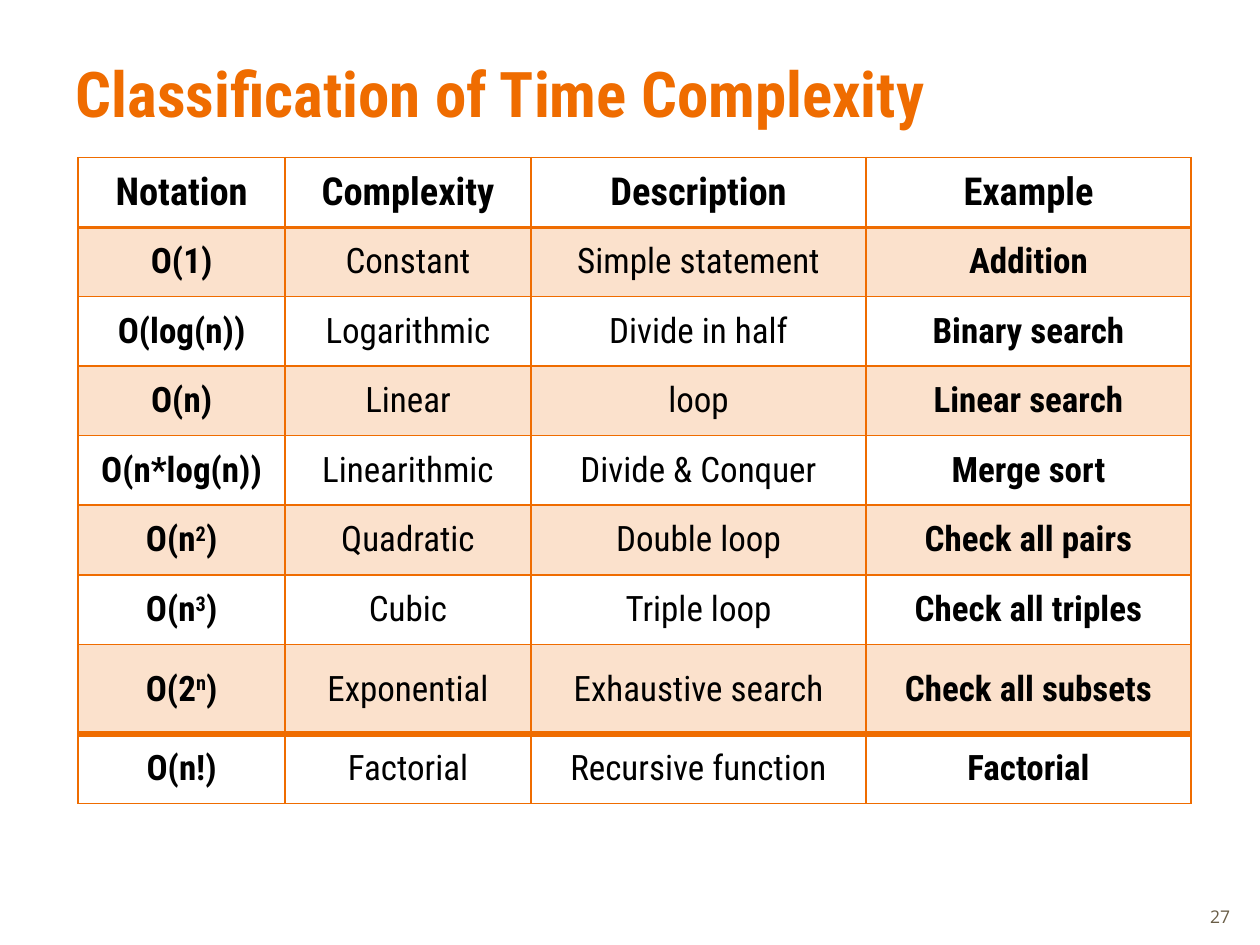
from dataclasses import dataclass

from lxml.etree import SubElement
from pptx import Presentation
from pptx.dml.color import RGBColor as RGB
from pptx.enum.text import MSO_ANCHOR as Anchor, PP_ALIGN as Align
from pptx.oxml.ns import qn
from pptx.util import Pt


@dataclass(frozen=True)
class Theme:
    accent: str = "EF6C00"
    text: str = "000000"
    muted: str = "695D46"
    font: str = "Roboto Condensed"
    number_font: str = "Open Sans"
    title_size: int = 36
    header_size: int = 22
    cell_size: int = 20
    number_size: int = 10
    band_alpha: int = 20
    thin: int = 1
    medium: int = 2
    thick: int = 4


class Deck:
    def __init__(self, theme, width, height):
        self.theme = theme
        self.prs = Presentation()
        self.prs.slide_width, self.prs.slide_height = Pt(width), Pt(height)
        self.s = None

    def add_slide(self):
        self.s = self.prs.slides.add_slide(self.prs.slide_layouts[5])

    def style(self, p, size, color, align, bold=False, font=None):
        p.alignment = align
        f = p.font
        f.name, f.size, f.bold = font or self.theme.font, Pt(size), bold
        f.color.rgb = RGB.from_string(color)

    def title(self, text, x, y, w, h):
        t = self.theme
        sp = self.s.shapes.title
        sp.left, sp.top, sp.width, sp.height = map(Pt, (x, y, w, h))
        tf = sp.text_frame
        tf.text = text
        tf.vertical_anchor = Anchor.MIDDLE
        self.style(tf.paragraphs[0], t.title_size, t.accent, Align.LEFT, True)

    def page_number(self, text, x, y, w, h):
        t = self.theme
        tf = self.s.shapes.add_textbox(*map(Pt, (x, y, w, h))).text_frame
        tf.word_wrap = True
        tf.vertical_anchor = Anchor.BOTTOM
        tf.text = text
        self.style(tf.paragraphs[0], t.number_size, t.muted, Align.RIGHT,
                   font=t.number_font)

    def borders(self, cell, top, bottom):
        t = self.theme
        tcPr = cell._tc.get_or_add_tcPr()
        for side, width in zip("LRTB", (t.thin, t.thin, top, bottom)):
            ln = SubElement(tcPr, qn(f"a:ln{side}"), w=str(Pt(width)))
            fill = SubElement(ln, qn("a:solidFill"))
            SubElement(fill, qn("a:srgbClr"), val=t.accent)

    def band(self, cell):
        cell.fill.solid()
        cell.fill.fore_color.rgb = RGB.from_string(self.theme.accent)
        clr = cell._tc.tcPr.find(f"{qn('a:solidFill')}/{qn('a:srgbClr')}")
        SubElement(clr, qn("a:alpha"), val=str(self.theme.band_alpha * 1000))

    def cell_text(self, cell, text, size, bold):
        cell.margin_left = cell.margin_right = Pt(5)
        cell.margin_top = cell.margin_bottom = 0
        cell.vertical_anchor = Anchor.MIDDLE
        p = cell.text_frame.paragraphs[0]
        for i, part in enumerate(text.split("^")):
            r = p.add_run()
            r.text = part
            if i == 1:
                r._r.get_or_add_rPr().set("baseline", "30000")
        self.style(p, size, self.theme.text, Align.CENTER, bold)

    def table(self, rows, x, y, widths, heights):
        t = self.theme
        last = len(rows) - 1
        edges = [t.thin] * (len(rows) + 1)
        edges[1], edges[last] = t.medium, t.thick
        frame = self.s.shapes.add_table(
            len(rows), len(widths), Pt(x), Pt(y), Pt(sum(widths)), Pt(sum(heights)))
        tbl = frame.table
        tbl.first_row = tbl.horz_banding = False
        for col, w in zip(tbl.columns, widths):
            col.width = Pt(w)
        for i, row in enumerate(rows):
            tbl.rows[i].height = Pt(heights[i])
            for j, text in enumerate(row):
                cell = tbl.cell(i, j)
                size = t.cell_size if i else t.header_size
                bold = i == 0 or j in (0, len(row) - 1)
                self.cell_text(cell, text, size, bold)
                self.borders(cell, edges[i], edges[i + 1])
                if i % 2:
                    self.band(cell)
                else:
                    cell.fill.background()


ROWS = [
    ("Notation", "Complexity", "Description", "Example"),
    ("O(1)", "Constant", "Simple statement", "Addition"),
    ("O(log(n))", "Logarithmic", "Divide in half", "Binary search"),
    ("O(n)", "Linear", "loop", "Linear search"),
    ("O(n*log(n))", "Linearithmic", "Divide & Conquer", "Merge sort"),
    ("O(n^2^)", "Quadratic", "Double loop", "Check all pairs"),
    ("O(n^3^)", "Cubic", "Triple loop", "Check all triples"),
    ("O(2^n^)", "Exponential", "Exhaustive search", "Check all subsets"),
    ("O(n!)", "Factorial", "Recursive function", "Factorial"),
]


def main():
    deck = Deck(Theme(), 720, 540)
    deck.add_slide()
    deck.page_number("27", 681, 504.5, 29, 29)
    deck.title("Classification of Time Complexity", 36, 21.6, 648, 62.6)
    heights = [39.75] * len(ROWS)
    heights[-2] = 51.2
    deck.table(ROWS, 44.7, 90, (118.2, 140.6, 191.4, 185.7), heights)
    deck.prs.save("out.pptx")


if __name__ == "__main__":
    main()
